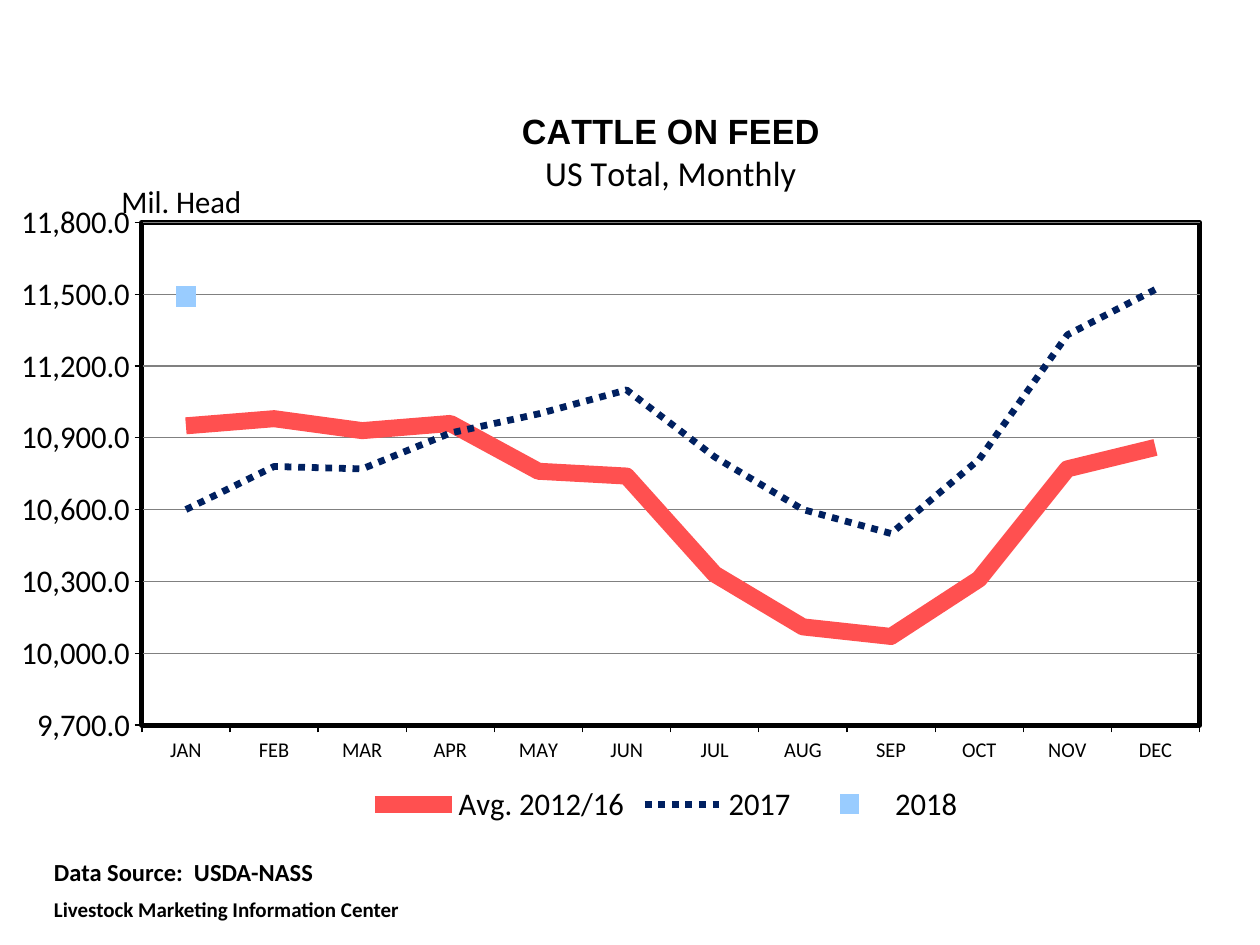
import lxml.etree
import pptx
import pptx.chart.data
import pptx.dml.color
import pptx.enum.chart
import pptx.enum.dml
import pptx.oxml
import pptx.oxml.ns
import pptx.util
from pptx.util import Inches

COLORS = {"text": "000000", "grid": "808080", "average": "FF5050",
          "2017": "002060", "2018": "99CCFF", "background": "FFFFFF"}
MONTHS = ["JAN", "FEB", "MAR", "APR", "MAY", "JUN",
          "JUL", "AUG", "SEP", "OCT", "NOV", "DEC"]
SERIES = {
    "Avg. 2012/16": [10950, 10980, 10930, 10960, 10760, 10740,
                     10330, 10110, 10070, 10310, 10770, 10860],
    "2017": [10600, 10780, 10770, 10920, 11000, 11100,
             10820, 10600, 10500, 10810, 11330, 11520],
    "2018": [11490] + [None] * 11,
}


def rgb(name):
    """Return the named colour."""
    return pptx.dml.color.RGBColor.from_string(COLORS[name])


def style_font(font, size, bold=False, name="Calibri"):
    """Set the face, size, weight and colour of a font."""
    font.name, font.size, font.bold = name, pptx.util.Pt(size), bold
    font.color.rgb = rgb("text")


def style_line(line, color, width):
    """Set the colour and width of a line."""
    line.color.rgb = rgb(color)
    line.width = pptx.util.Pt(width)


def place_part(part, index, **fractions):
    """Give a chart part a manual layout in fractions of the chart."""
    for layout in part.xpath("c:layout"):
        part.remove(layout)
    tag = pptx.oxml.ns.qn
    layout = lxml.etree.Element(tag("c:layout"))
    manual = lxml.etree.SubElement(layout, tag("c:manualLayout"))
    if part.tag == tag("c:plotArea"):
        lxml.etree.SubElement(manual, tag("c:layoutTarget")).set("val", "inner")
    for mode in ("xMode", "yMode"):
        lxml.etree.SubElement(manual, tag(f"c:{mode}")).set("val", "edge")
    for key, value in fractions.items():
        lxml.etree.SubElement(manual, tag(f"c:{key}")).set("val", str(value))
    part.insert(index, layout)


def frame_plot(plot_area):
    """Fill the plot area and draw its border."""
    plot_area.append(pptx.oxml.parse_xml(
        f'<c:spPr {pptx.oxml.ns.nsdecls("c", "a")}>'
        f'<a:solidFill><a:srgbClr val="{COLORS["background"]}"/></a:solidFill>'
        f'<a:ln w="{pptx.util.Pt(3)}"><a:solidFill>'
        f'<a:srgbClr val="{COLORS["text"]}"/></a:solidFill></a:ln></c:spPr>'))


def style_axes(chart):
    """Format both axes, the gridlines and the value axis title."""
    for axis, size in ((chart.category_axis, 12), (chart.value_axis, 18)):
        style_font(axis.tick_labels.font, size)
        style_line(axis.format.line, "text", 0.75)
        axis.major_tick_mark = pptx.enum.chart.XL_TICK_MARK.OUTSIDE
        axis.minor_tick_mark = pptx.enum.chart.XL_TICK_MARK.NONE
    axis = chart.value_axis
    axis.minimum_scale, axis.maximum_scale, axis.major_unit = 9700, 11800, 300
    axis.tick_labels.number_format = "#,##0.0"
    axis.tick_labels.number_format_is_linked = False
    axis.has_major_gridlines = True
    style_line(axis.major_gridlines.format.line, "grid", 0.75)
    axis.axis_title.text_frame.text = "Mil. Head"
    style_font(axis.axis_title.text_frame.paragraphs[0].runs[0].font, 18)
    body = chart.element.xpath(".//c:valAx/c:title//a:bodyPr")[0]
    body.set("rot", "0")
    body.set("vert", "horz")


def style_series(chart):
    """Format the two lines and the single marker."""
    average, previous, current = chart.plots[0].series
    for series in (average, previous, current):
        series.smooth = False
        series.marker.style = pptx.enum.chart.XL_MARKER_STYLE.NONE
    style_line(average.format.line, "average", 10)
    style_line(previous.format.line, "2017", 4)
    previous.format.line.dash_style = pptx.enum.dml.MSO_LINE.ROUND_DOT
    current.format.line.fill.background()
    current.marker.style = pptx.enum.chart.XL_MARKER_STYLE.SQUARE
    current.marker.size = 11
    current.marker.format.fill.solid()
    current.marker.format.fill.fore_color.rgb = rgb("2018")
    current.marker.format.line.fill.background()


def add_feed_chart(slide, left, top, width, height):
    """Add the monthly cattle chart in the given box."""
    data = pptx.chart.data.CategoryChartData(number_format="#,##0.0")
    data.categories = MONTHS
    for name, values in SERIES.items():
        data.add_series(name, values)
    chart = slide.shapes.add_chart(
        pptx.enum.chart.XL_CHART_TYPE.LINE_MARKERS,
        left, top, width, height, data).chart
    style_font(chart.font, 18)
    chart.plots[0].vary_by_categories = False
    style_axes(chart)
    style_series(chart)

    chart.has_title = True
    title = chart.chart_title
    title.include_in_layout = False
    title.text_frame.text = "CATTLE ON FEED\nUS Total, Monthly"
    heading, subtitle = title.text_frame.paragraphs
    style_font(heading.runs[0].font, 20, True, "Arial")
    style_font(subtitle.runs[0].font, 20)

    chart.has_legend = True
    chart.legend.position = pptx.enum.chart.XL_LEGEND_POSITION.BOTTOM
    chart.legend.include_in_layout = False
    style_font(chart.legend.font, 18)

    plot_area = chart.element.xpath(".//c:plotArea")[0]
    frame_plot(plot_area)
    place_part(plot_area, 0, x=0.072 + 0, y=0.185, w=0.894, h=0.674)
    place_part(chart.element.xpath("c:chart/c:title")[0], 1, x=0.39, y=0.03)
    place_part(chart.element.xpath(".//c:valAx/c:title")[0], 1, x=0.05, y=0.12)
    place_part(chart.element.xpath(".//c:legend")[0], 1,
               x=0.26, y=0.93, w=0.51, h=0.07)


def add_source_note(slide, left, top, width, height):
    """Add the data source lines in the given box."""
    frame = slide.shapes.add_textbox(left, top, width, height).text_frame
    frame.word_wrap = True
    frame.text = "Data Source:  USDA-NASS\nLivestock Marketing Information Center"
    for paragraph, size in zip(frame.paragraphs, (14, 12)):
        style_font(paragraph.runs[0].font, size, True)
    frame.paragraphs[1].space_before = pptx.util.Pt(6)


def main():
    """Build and save the presentation."""
    presentation = pptx.Presentation()
    presentation.slide_width, presentation.slide_height = Inches(10), Inches(7.5)
    slide = presentation.slides.add_slide(presentation.slide_layouts[6])
    add_feed_chart(slide, Inches(0.17), Inches(0.67), Inches(9.67), Inches(5.92))
    add_source_note(slide, Inches(0.33), Inches(6.75), Inches(4.5), Inches(0.64))
    presentation.save("out.pptx")


if __name__ == "__main__":
    main()
